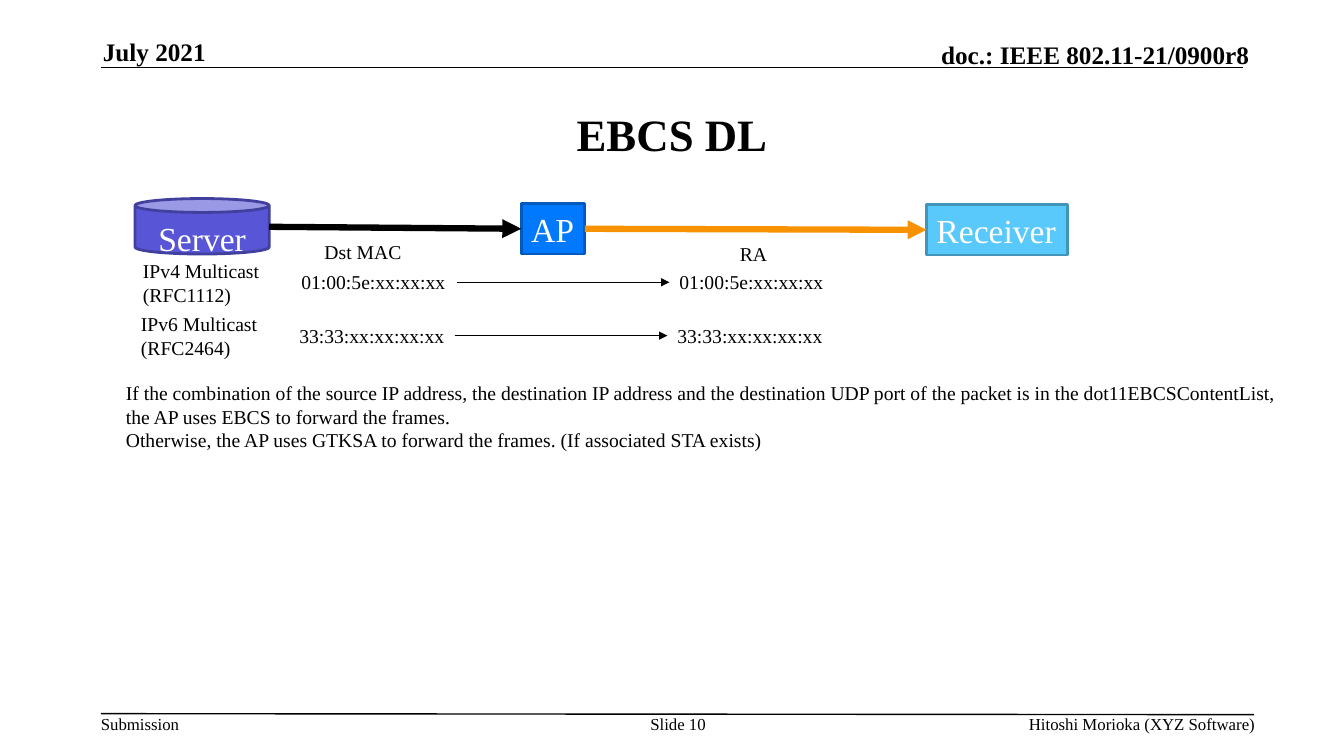
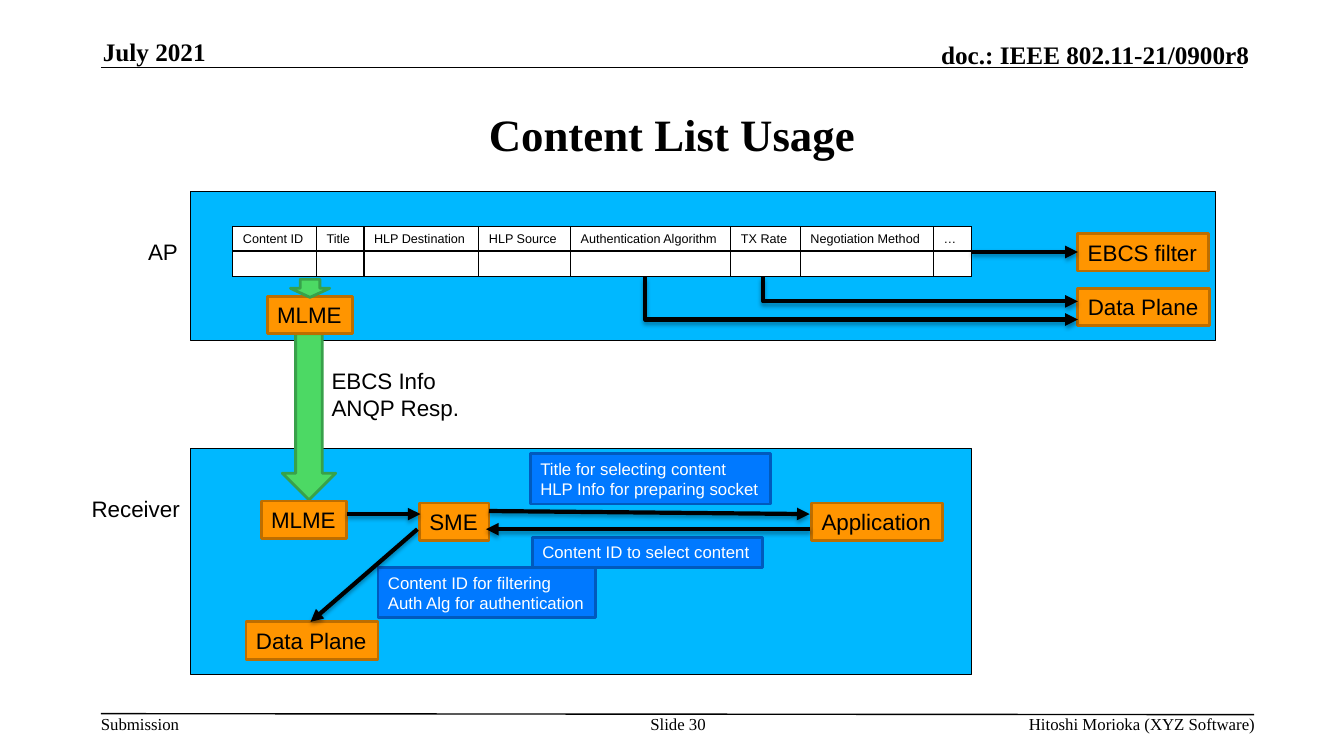
import pptx
import pptx.dml.color
import pptx.enum.shapes
import pptx.enum.text
import pptx.oxml
import pptx.oxml.ns
import pptx.util
from lxml import etree

CELL = pptx.util.Inches(0.1)  # the grid: 133.3 columns by 75 rows
COLS, ROWS = 133.3, 75
LEFT, HEAD, FOOT = 10, 6.7, 70.8

HUES = {
    "ink": "000000", "paper": "FFFFFF", "panel": "00B8FF",
    "blue": "0079FF", "navy": "005ABD", "sky": "59C8FA", "steel": "4294B9",
    "violet": "5856D6", "plum": "41409E", "amber": "FF9500", "brown": "BD6E00",
    "orange": "F99200", "green": "4CD964", "moss": "38A14A",
}
SERIF, SANS = "Times New Roman", "Arial"
KIND = pptx.enum.shapes.MSO_SHAPE
SIDE = pptx.enum.text.PP_ALIGN
EDGE = pptx.enum.text.MSO_ANCHOR
FIT = pptx.enum.text.MSO_AUTO_SIZE
NODE = ("amber", "brown")
NOTE = ("blue", "navy")
GROWTH = ("green", "moss")


def span(*cells):
    """Turn grid cells into lengths."""
    return [pptx.util.Emu(int(n * CELL)) for n in cells]


def hue(name):
    return pptx.dml.color.RGBColor.from_string(HUES[name])


def tag(home, name, **marks):
    return etree.SubElement(home, pptx.oxml.ns.qn("a:" + name), **marks)


def write(frame, lines, size, face=SERIF, ink="ink", bold=False,
          side=SIDE.LEFT, edge=EDGE.TOP, inset=True, wrap=False, grow=True):
    """Fill a text frame, one paragraph for each line."""
    frame.word_wrap = wrap
    frame.auto_size = FIT.SHAPE_TO_FIT_TEXT if grow else FIT.NONE
    frame.vertical_anchor = edge
    frame.margin_left, frame.margin_right = span(*[1 if inset else 0] * 2)
    frame.margin_top, frame.margin_bottom = span(*[0.5 if inset else 0] * 2)
    for i, line in enumerate(lines.split("\n")):
        para = frame.add_paragraph() if i else frame.paragraphs[0]
        para.alignment = side
        run = para.add_run()
        run.text = line
        run.font.size = pptx.util.Pt(size)
        run.font.name = face
        run.font.bold = bold
        run.font.color.rgb = hue(ink)


def label(slide, place, lines, size, **style):
    write(slide.shapes.add_textbox(*span(*place)).text_frame, lines, size, **style)


def block(slide, place, paint, lines="", size=16, kind=KIND.RECTANGLE,
          width=2, **style):
    """Draw a preset shape; paint is its fill and its line."""
    shape = slide.shapes.add_shape(kind, *span(*place))
    shape.shadow.inherit = False
    shape.fill.solid()
    shape.fill.fore_color.rgb = hue(paint[0])
    shape.line.color.rgb = hue(paint[1])
    shape.line.width = pptx.util.Pt(width)
    if lines:
        write(shape.text_frame, lines, size, **style)


def stroke(slide, points, width, ink="ink", arrow=True, shade=False):
    """Draw a line through two or more points."""
    ends = [span(*point) for point in points]
    if len(ends) == 2:
        line = slide.shapes.add_connector(
            pptx.enum.shapes.MSO_CONNECTOR.STRAIGHT, *ends[0], *ends[1])
    else:
        form = slide.shapes.build_freeform(*ends[0], scale=1.0)
        form.add_line_segments(ends[1:], close=False)
        line = form.convert_to_shape()
        line.fill.background()
    line.line.color.rgb = hue(ink)
    line.line.width = pptx.util.Pt(width)
    props = line.element.spPr
    if arrow:
        tag(props.find(pptx.oxml.ns.qn("a:ln")), "tailEnd", type="triangle")
    glow = tag(props, "effectLst")
    if shade:
        cast = tag(glow, "outerShdw", blurRad=str(pptx.util.Pt(3.1)),
                   dist=str(pptx.util.Pt(1.8)), dir="5400000", rotWithShape="0")
        tag(tag(cast, "srgbClr", val=HUES["ink"]), "alpha", val="35000")


def border(cell):
    props = cell._tc.get_or_add_tcPr()
    for i, name in enumerate(("lnL", "lnR", "lnT", "lnB")):
        line = etree.Element(pptx.oxml.ns.qn("a:" + name), w=str(pptx.util.Pt(1)))
        tag(tag(line, "solidFill"), "srgbClr", val=HUES["ink"])
        props.insert(i, line)


def grid(slide, place, heads, widths):
    """Draw a table with a head row and one empty row."""
    table = slide.shapes.add_table(2, len(heads), *span(*place)).table
    table.first_row = table.horz_banding = False
    for row in table.rows:
        row.height = span(place[3] / 2)[0]
    for i, (head, width) in enumerate(zip(heads, widths)):
        table.columns[i].width = span(width)[0]
        write(table.cell(0, i).text_frame, head, 9, face=SANS, wrap=True, grow=False)
        blank = table.cell(1, i).text_frame.paragraphs[0]
        tag(blank._p, "endParaRPr", sz="900")
        for j in range(2):
            cell = table.cell(j, i)
            cell.margin_left = cell.margin_right = span(1)[0]
            cell.margin_top = cell.margin_bottom = span(0.5)[0]
            cell.fill.solid()
            cell.fill.fore_color.rgb = hue("paper")
            border(cell)


def start(deck, title, page):
    """Add a slide with its title, header and footer."""
    slide = deck.slides.add_slide(deck.slide_layouts[5])
    stroke(slide, [(LEFT, HEAD), (123.3, HEAD)], 1, arrow=False)
    stroke(slide, [(LEFT, FOOT), (124.4, FOOT + 0.1)], 1, arrow=False)
    head = dict(size=18, bold=True, edge=EDGE.BOTTOM)
    foot = dict(size=12)
    for place, line, side, style in (
            ((10.2, 3.6, 27.3, 3), "July 2021", SIDE.LEFT, head),
            ((72.9, 3.9, 51, 3), "doc.: IEEE 802.11-21/0900r8", SIDE.RIGHT, head),
            ((LEFT, FOOT, 7.9, 2), "Submission", SIDE.LEFT, foot),
            ((63.4, FOOT, 7.7, 4), f"Slide {page}", SIDE.CENTER, foot),
            ((78.1, FOOT, 46.4, 2), "Hitoshi Morioka (XYZ Software)", SIDE.RIGHT, foot)):
        label(slide, place, line, side=side, inset=False, wrap=True, grow=False, **style)
    name = slide.shapes.title
    name.left, name.top, name.width, name.height = span(LEFT, 7.5, 113.3, 11.6)
    write(name.text_frame, title, 32, bold=True, side=SIDE.CENTER,
          edge=EDGE.MIDDLE, wrap=True, grow=False)
    return slide


def downlink(deck):
    slide = start(deck, "EBCS DL", 10)
    block(slide, (51.7, 20.2, 6.3, 5), NOTE, "AP", 24, ink="paper")
    block(slide, (91.9, 20.3, 14, 5), ("sky", "steel"), "Receiver", 24, ink="paper")
    block(slide, (13.4, 19.7, 13.3, 5.5), ("violet", "plum"), "Server", 24,
          kind=KIND.CAN, ink="paper", side=SIDE.CENTER, wrap=True, grow=False)
    stroke(slide, [(58, 22.7), (91.9, 22.8)], 4.5, "orange")
    stroke(slide, [(26.7, 22.5), (51.7, 22.7)], 4.5)
    label(slide, (31.2, 23.3, 9.7, 3.4), "Dst MAC", 14)
    label(slide, (72.4, 23.5, 4.8, 3.4), "RA", 14)
    for x, y, name, code in (
            (13.2, 25.2, "IPv4 Multicast\n(RFC1112)", "01:00:5e:xx:xx:xx"),
            (13, 30.5, "IPv6 Multicast\n(RFC2464)", "33:33:xx:xx:xx:xx")):
        label(slide, (x, y, 13.6, 5.7), name, 14)
        for shift in (15.7, 53.2):
            label(slide, (x + shift, y + 1.1, 16.4, 3.4), code, 14)
        stroke(slide, [(x + 32.1, y + 2.8), (x + 53.2, y + 2.8)], 0.75)
    label(slide, (11.5, 37.3, 116.5, 8.1),
          "If the combination of the source IP address, the destination IP address and "
          "the destination UDP port of the packet is in the dot11EBCSContentList,\n"
          "the AP uses EBCS to forward the frames.\n"
          "Otherwise, the AP uses GTKSA to forward the frames. (If associated STA exists)", 14)


def usage(deck):
    slide = start(deck, "Content List Usage", 30)
    for place in ((18.9, 19, 101.7, 14.8), (18.9, 44.5, 77.5, 22.4)):
        block(slide, place, ("panel", "ink"), width=0.75)
    grid(slide, (23.1, 22.5, 73.3, 4.8),
         ("Content ID", "Title", "HLP Destination", "HLP Source",
          "Authentication Algorithm", "TX Rate", "Negotiation Method", "…"),
         (8.3, 4.7, 11.4, 9.1, 15.9, 6.9, 13.2, 3.8))
    for place, lines in (((13.7, 23.1, 5, 3.7), "AP"),
                         ((8.1, 48.6, 10.9, 3.7), "Receiver"),
                         ((31.9, 35.9, 14.8, 6.4), "EBCS Info\nANQP Resp.")):
        label(slide, place, lines, 16, face=SANS)
    block(slide, (28, 33.1, 5.3, 16.5), GROWTH, kind=KIND.DOWN_ARROW)
    for x, y, width, name in (
            (106.9, 23.2, 13, "EBCS filter"), (106.9, 28.6, 13.1, "Data Plane"),
            (26.5, 29.4, 8.5, "MLME"), (25.9, 49.7, 8.5, "MLME"),
            (41.6, 49.9, 6.9, "SME"), (80.5, 49.9, 13, "Application"),
            (24.4, 61.7, 13.1, "Data Plane")):
        block(slide, (x, y, width, 3.7), NODE, name, face=SANS)
    block(slide, (28.8, 27.7, 3.9, 1.8), GROWTH, kind=KIND.DOWN_ARROW)
    for place, lines in (
            ((52.6, 45, 23.8, 5), "Title for selecting content\nHLP Info for preparing socket"),
            ((52.8, 53.3, 22.8, 3), "Content ID to select content"),
            ((37.5, 56.3, 21.6, 5), "Content ID for filtering\nAuth Alg for authentication")):
        block(slide, place, NOTE, lines, 12, face=SANS, ink="paper")
    for points in (
            [(96.4, 25), (106.9, 25)],
            [(64, 27.5), (64, 31.7), (106.9, 31.7)],
            [(75.7, 27.5), (75.7, 29.9), (106.9, 29.9)],
            [(34.4, 51), (41.7, 51)],
            [(48.5, 50.7), (80.3, 51)],
            [(80.3, 52.5), (48.2, 52.5)],
            [(41.4, 52.5), (30.8, 61.7)]):
        stroke(slide, points, 3, shade=True)


def main():
    deck = pptx.Presentation()
    deck.slide_width, deck.slide_height = span(COLS, ROWS)
    downlink(deck)
    usage(deck)
    deck.save("out.pptx")


if __name__ == "__main__":
    main()
